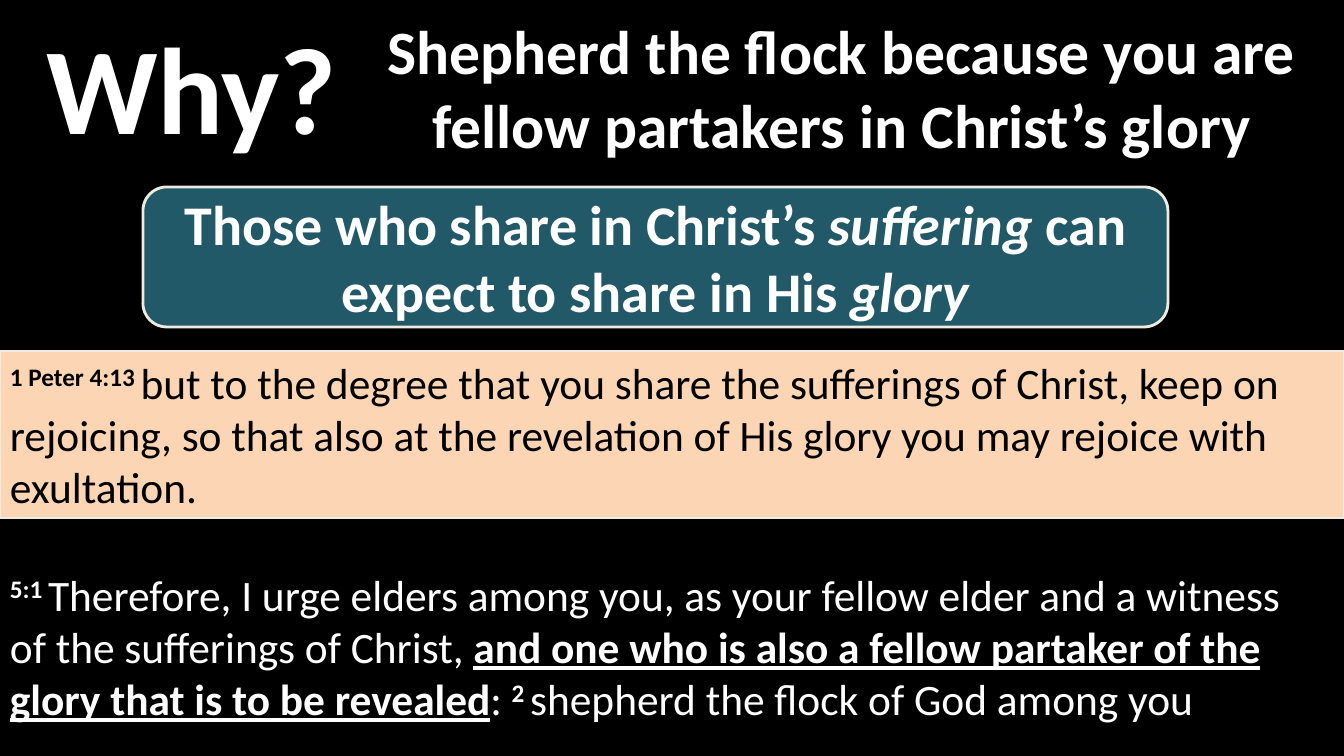
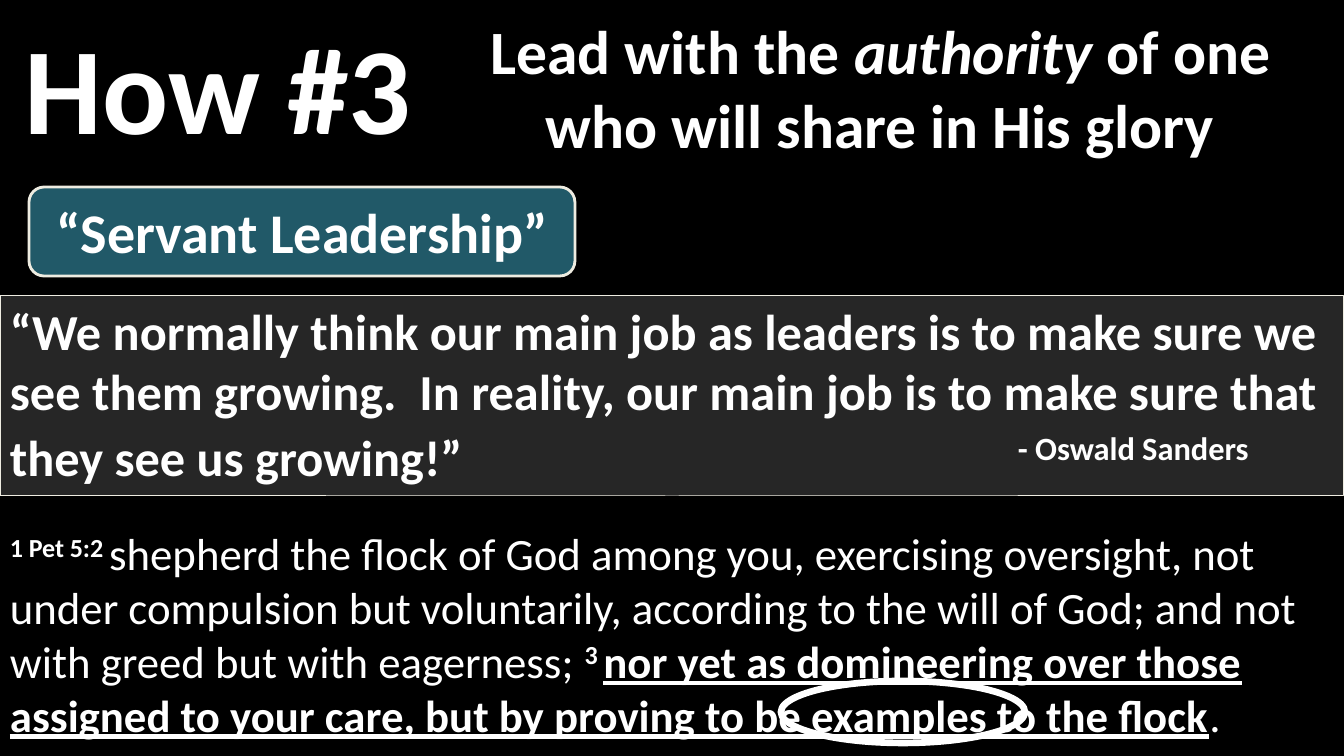
import dataclasses

import lxml.etree
import pptx
import pptx.dml.color
import pptx.enum.shapes
import pptx.enum.text
import pptx.oxml.ns
import pptx.util

EMU_PER_PX = 914400 / 100.8
SHAPE = pptx.enum.shapes.MSO_SHAPE
ALIGN = pptx.enum.text.PP_ALIGN
ANCHOR = pptx.enum.text.MSO_ANCHOR


@dataclasses.dataclass(frozen=True)
class Theme:
    """Colours, font and type sizes shared by the slides."""

    font: str = "Calibri"
    background: str = "000000"
    light: str = "FFFFFF"
    dark: str = "000000"
    border: str = "EEECE1"
    key_point: str = "215968"
    scripture_band: str = "FCD5B5"
    quote_band: str = "262626"
    lead_size: int = 88
    title_size: int = 44
    key_point_size: int = 40
    quote_size: int = 36
    attribution_size: int = 40
    passage_size: int = 32
    short_passage_size: int = 31


THEME = Theme()
WIDTH, HEIGHT = 1344, 756
VERSE = {"bold": True, "baseline": 30}
ITALIC = {"italic": True}
STRESS = {"bold": True, "underline": True}


def px(length):
    """Turn pixels into EMU."""
    return pptx.util.Emu(round(length * EMU_PER_PX))


def rgb(color):
    """Turn a hex string into a colour."""
    return pptx.dml.color.RGBColor.from_string(color)


def add_text(paragraph, text, *, size, color=THEME.light, bold=False,
             italic=False, underline=False, baseline=0):
    """Append formatted text to a paragraph."""
    run = paragraph.add_run()
    run.text = text
    font = run.font
    font.name = THEME.font
    font.size = pptx.util.Pt(size)
    font.color.rgb = rgb(color)
    font.bold, font.italic, font.underline = bold, italic, underline
    if baseline:
        run._r.get_or_add_rPr().set("baseline", str(baseline * 1000))


def fill_frame(frame, runs, *, align=ALIGN.LEFT, anchor=ANCHOR.TOP, **base):
    """Write (text, format) runs into one paragraph and return it."""
    frame.word_wrap = True
    frame.vertical_anchor = anchor
    paragraph = frame.paragraphs[0]
    paragraph.alignment = align
    for text, style in runs:
        add_text(paragraph, text, **{**base, **style})
    return paragraph


def panel(slide, preset, box, *, fill=None, line=None, line_width=1):
    """Add a preset shape with optional fill and outline."""
    shape = slide.shapes.add_shape(preset, *map(px, box))
    shape.shadow.inherit = False
    if fill:
        shape.fill.solid()
        shape.fill.fore_color.rgb = rgb(fill)
    else:
        shape.fill.background()
    if line:
        shape.line.color.rgb = rgb(line)
        shape.line.width = pptx.util.Pt(line_width)
    else:
        shape.line.fill.background()
    return shape


def callout(slide, box, runs, *, size, **look):
    """Add a rounded callout with bold centred text."""
    shape = panel(slide, SHAPE.ROUNDED_RECTANGULAR_CALLOUT, box, **look)
    for index, value in enumerate((-0.22, 0.5, 0.17)):
        shape.adjustments[index] = value
    fill_frame(shape.text_frame, runs, align=ALIGN.CENTER,
               anchor=ANCHOR.MIDDLE, size=size, bold=True)


def heading(slide, box, lead, lead_width, title, title_offset):
    """Place the large lead word and the title beside it."""
    left, top, width, height = box
    callout(slide, (left, top, lead_width, height), [(lead, {})],
            size=THEME.lead_size)
    callout(slide, (left + title_offset, top + 2, width - title_offset, height),
            title, size=THEME.title_size)


def key_point(slide, box, runs):
    """Place the teal key statement."""
    callout(slide, box, runs, size=THEME.key_point_size,
            fill=THEME.key_point, line=THEME.border, line_width=2)


def band(slide, box, runs, *, fill, line_width, **base):
    """Place a full-width band of text and return its paragraph."""
    shape = panel(slide, SHAPE.RECTANGLE, box, fill=fill,
                  line=THEME.border, line_width=line_width)
    return fill_frame(shape.text_frame, runs, **base)


def passage(slide, box, runs, *, size, right_inset=10):
    """Place a Bible passage on the background."""
    frame = slide.shapes.add_textbox(*map(px, box)).text_frame
    frame.margin_right = px(right_inset)
    fill_frame(frame, runs, size=size)


def set_tab(paragraph, position):
    """Give a paragraph one left tab stop."""
    qn = pptx.oxml.ns.qn
    stops = lxml.etree.SubElement(paragraph._p.get_or_add_pPr(), qn("a:tabLst"))
    lxml.etree.SubElement(stops, qn("a:tab"), pos=str(px(position)), algn="l")


def new_slide(deck):
    """Add a blank slide with the shared background."""
    slide = deck.slides.add_slide(deck.slide_layouts[6])
    slide.background.fill.solid()
    slide.background.fill.fore_color.rgb = rgb(THEME.background)
    return slide


def why_slide(deck, heading_box):
    """Build the slide on why to shepherd."""
    slide = new_slide(deck)
    passage(slide, (0, 563, WIDTH, 176), [
        ("5:1 ", VERSE),
        ("Therefore, I urge elders among you, as your fellow elder and a "
         "witness of the sufferings of Christ, ", {}),
        ("and one who is also a fellow partaker of the glory that is to be "
         "revealed", STRESS),
        (": ", {}),
        ("2 ", VERSE),
        ("shepherd the flock of God among you", {}),
    ], size=THEME.short_passage_size, right_inset=30)
    heading(slide, heading_box, "Why? ", 411, [
        ("Shepherd the flock because you are fellow partakers in Christ’s "
         "glory", {}),
    ], 359)
    band(slide, (0, 351, WIDTH, 167), [
        ("1 Peter 4:13 ", VERSE),
        ("but to the degree that you share the sufferings of Christ, keep on "
         "rejoicing, so that also at the revelation of His glory you may "
         "rejoice with exultation.", {}),
    ], fill=THEME.scripture_band, line_width=1.5,
        size=THEME.short_passage_size, color=THEME.dark)
    key_point(slide, (143, 187, 1025, 140), [
        ("Those who share in Christ’s ", {}),
        ("suffering", ITALIC),
        (" can expect to share in His ", {}),
        ("glory", ITALIC),
    ])


def how_slide(deck, heading_box):
    """Build the slide on how to lead."""
    slide = new_slide(deck)
    passage(slide, (0, 521, WIDTH, 235), [
        ("1 Pet 5:2 ", VERSE),
        ("shepherd the flock of God among you, exercising oversight, not "
         "under compulsion but voluntarily, according to the will of God; "
         "and not with greed but with eagerness; ", {}),
        ("3 ", VERSE),
        ("nor yet as domineering over those assigned to your care, but by "
         "proving to be examples to the flock", STRESS),
        (".", {}),
    ], size=THEME.passage_size)
    heading(slide, heading_box, "How #3 ", 436, [
        ("Lead with the ", {}),
        ("authority", ITALIC),
        (" of one who will share in His glory", {}),
    ], 436)
    key_point(slide, (29, 187, 546, 89), [("“Servant Leadership”", {})])
    panel(slide, SHAPE.OVAL, (781, 681, 244, 62),
          line=THEME.light, line_width=4.75)
    quote = band(slide, (0, 295, WIDTH, 201), [
        ("“We normally think our main job as leaders is to make sure we see "
         "them growing.  In reality, our main job is to make sure that they "
         "see us growing!”\t", {}),
        ("- Oswald Sanders", {"size": THEME.attribution_size, "baseline": 30}),
    ], fill=THEME.quote_band, line_width=0.75,
        size=THEME.quote_size, bold=True)
    set_tab(quote, 1008)


def main():
    """Build and save the presentation."""
    deck = pptx.Presentation()
    deck.slide_width, deck.slide_height = px(WIDTH), px(HEIGHT)
    heading_box = (0, 15, 1325, 140)
    why_slide(deck, heading_box)
    how_slide(deck, heading_box)
    deck.save("out.pptx")


if __name__ == "__main__":
    main()
